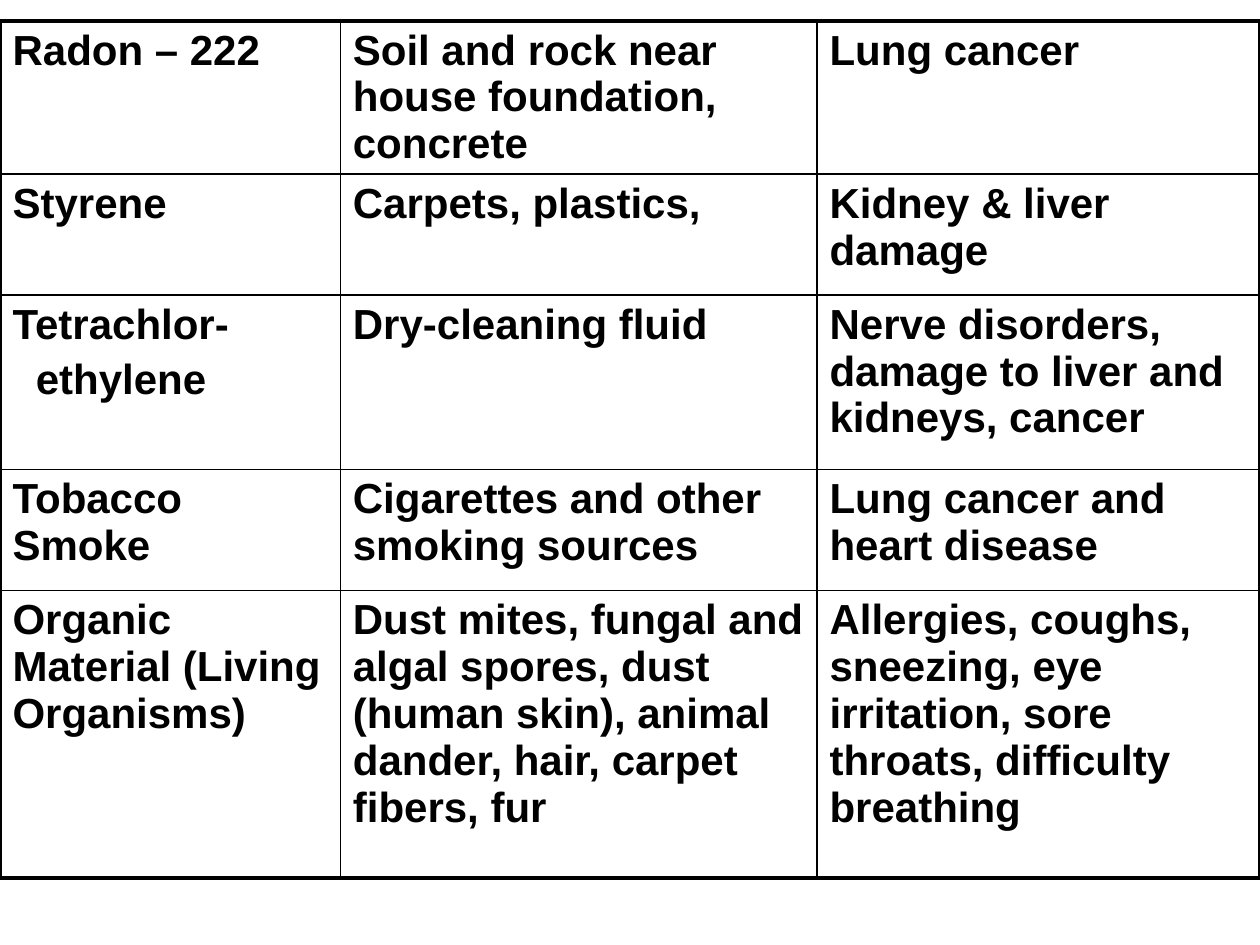
from lxml.etree import SubElement
from pptx import Presentation
from pptx.dml.color import RGBColor
from pptx.oxml.ns import qn
from pptx.util import Cm, Pt

BLACK = RGBColor(0x00, 0x00, 0x00)
COLUMN_WIDTHS = [6.86, 9.61, 8.93]
ROW_HEIGHTS = [3.08, 2.44, 3.52, 2.44, 5.79]
POLLUTANTS = [
    ["Radon – 222", "Soil and rock near house foundation, concrete", "Lung cancer"],
    ["Styrene", "Carpets, plastics,", "Kidney & liver damage"],
    ["Tetrachlor-\nethylene", "Dry-cleaning fluid",
     "Nerve disorders, damage to liver and kidneys, cancer"],
    ["Tobacco Smoke", "Cigarettes and other smoking sources",
     "Lung cancer and heart disease"],
    ["Organic Material (Living Organisms)",
     "Dust mites, fungal and algal spores, dust (human skin), animal dander, "
     "hair, carpet fibers, fur",
     "Allergies, coughs, sneezing, eye irritation, sore throats, difficulty breathing"],
]


def write_text(text_frame, text, *, font, size, color, bold, space_before, indent):
    text_frame.text = text
    for index, paragraph in enumerate(text_frame.paragraphs):
        if index:
            paragraph.space_before = space_before
            paragraph._p.get_or_add_pPr().set("marL", str(indent))
        for run in paragraph.runs:
            run.font.name = font
            run.font.size = size
            run.font.bold = bold
            run.font.color.rgb = color


class SlideBuilder:
    text_style = dict(font="Arial", size=Pt(24), color=BLACK, bold=True,
                      space_before=Pt(4.8), indent=Cm(0.47))
    inner_line = Pt(1)
    outer_line = Pt(2.25)

    def __init__(self, slide):
        self.slide = slide

    def border(self, cell, side, width):
        properties = cell._tc.get_or_add_tcPr()
        line = SubElement(properties, qn(f"a:ln{side}"), w=str(width))
        fill = SubElement(line, qn("a:solidFill"))
        SubElement(fill, qn("a:srgbClr"), val=str(BLACK))

    def table(self, rows, left, top, column_widths, row_heights):
        shape = self.slide.shapes.add_table(
            len(rows), len(column_widths), left, top,
            Cm(sum(column_widths)), Cm(sum(row_heights)))
        table = shape.table
        table.first_row = False
        table.horz_banding = False
        for column, width in zip(table.columns, column_widths):
            column.width = Cm(width)
        for row, height in zip(table.rows, row_heights):
            row.height = Cm(height)
        last_row, last_column = len(rows) - 1, len(column_widths) - 1
        for i, texts in enumerate(rows):
            for j, text in enumerate(texts):
                cell = table.cell(i, j)
                write_text(cell.text_frame, text, **self.text_style)
                outer_sides = {"L": j == 0, "R": j == last_column,
                               "T": i == 0, "B": i == last_row}
                for side, outer in outer_sides.items():
                    self.border(cell, side, self.outer_line if outer else self.inner_line)
                cell.fill.background()


def main():
    presentation = Presentation()
    presentation.slide_width = Cm(25.4)
    presentation.slide_height = Cm(19.05)
    slide = presentation.slides.add_slide(presentation.slide_layouts[6])
    builder = SlideBuilder(slide)
    builder.table(POLLUTANTS, Cm(0), Cm(0.42), COLUMN_WIDTHS, ROW_HEIGHTS)
    presentation.save("out.pptx")


if __name__ == "__main__":
    main()
